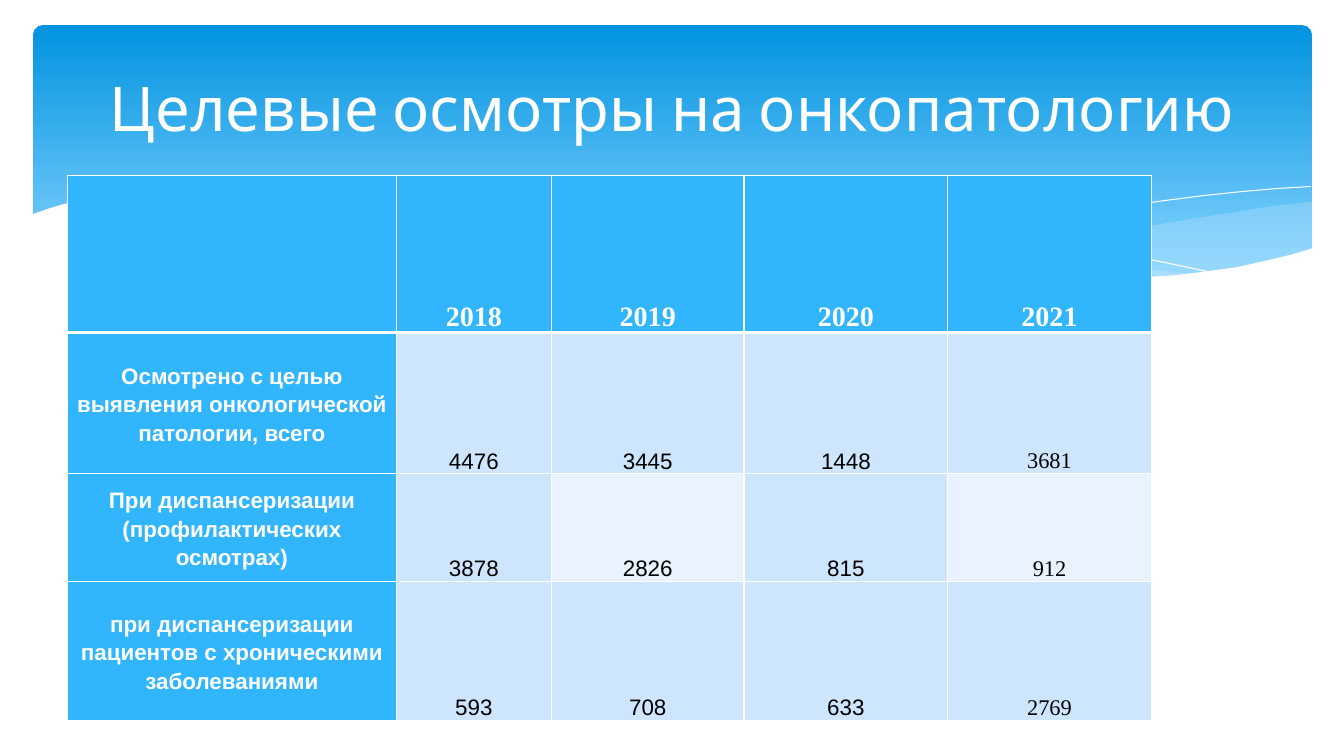
from lxml import etree
from pptx import Presentation
from pptx.dml.color import RGBColor
from pptx.enum import shapes, text
from pptx.oxml import ns
from pptx.util import Inches, Pt

TITLE = "Целевые осмотры на онкопатологию"
YEARS = ["", "2018", "2019", "2020", "2021"]
ROWS = [
    ["Осмотрено с целью выявления онкологической патологии, всего",
     "4476", "3445", "1448", "3681"],
    ["При диспансеризации (профилактических осмотрах)",
     "3878", "2826", "815", "912"],
    ["при диспансеризации пациентов с хроническими заболеваниями",
     "593", "708", "633", "2769"],
]
COLUMN_WIDTHS = [3.26, 1.54, 1.91, 2.02, 2.02]
ROW_HEIGHTS = [1.56, 1.4, 1.07, 1.38]
PALE_CELLS = {(2, 2), (2, 4)}
COLORS = {
    "sky_top": "0293E0", "sky_bottom": "83D3FE", "wave": "C6E7FC",
    "header": "31B6FD", "value": "CEE5FE", "pale": "E8F3FF",
    "white": "FFFFFF", "black": "000000",
}

RIGHT_WAVE = [
    (13.01, 2), (12.65, 2.04), (12.27, 2.1), (11.88, 2.16), (11.47, 2.23),
    (10.73, 2.37), (10.05, 2.48), (9.41, 2.57), (8.82, 2.65), (9.21, 2.69),
    (9.58, 2.72), (9.93, 2.75), (10.41, 2.77), (10.85, 2.78), (11.26, 2.77),
    (11.63, 2.74), (11.96, 2.7), (12.28, 2.65), (12.57, 2.59), (12.84, 2.52),
    (13.01, 2.47)]
MIDDLE_WAVE = [
    (11.9, 2.73), (11.54, 2.69), (10.76, 2.6), (9.89, 2.47), (8.91, 2.31),
    (8.39, 2.22), (7.78, 2.11), (7.21, 2.03), (6.69, 1.96), (6.19, 1.91),
    (5.6, 1.87), (5.06, 1.85), (4.59, 1.86), (4.18, 1.88), (3.82, 1.91),
    (4.31, 1.96), (4.83, 2.03), (5.39, 2.11), (5.99, 2.22), (7.06, 2.4),
    (8.02, 2.55), (8.87, 2.66), (9.63, 2.74), (10.3, 2.77), (10.9, 2.78),
    (11.43, 2.77)]
FALLING_LINE = [
    (4.12, 1.95), (4.38, 1.92), (4.84, 1.89), (5.35, 1.87), (6, 1.88),
    (6.8, 1.92), (7.42, 1.97), (8.11, 2.04), (8.86, 2.13), (9.7, 2.26),
    (10.6, 2.41), (11.58, 2.61), (12.1, 2.72)]
RISING_LINE = [
    (8.18, 2.57), (8.7, 2.46), (9.27, 2.35), (9.97, 2.23), (10.75, 2.1),
    (11.55, 1.99), (11.94, 1.94), (12.32, 1.9), (12.67, 1.87), (13, 1.85)]
WHITE_WAVE = [
    (13.03, 2.46), (12.79, 2.53), (12.54, 2.59), (12.27, 2.65), (11.98, 2.69),
    (11.67, 2.73), (11.34, 2.75), (10.97, 2.77), (10.58, 2.76), (10.15, 2.75),
    (9.69, 2.72), (9.18, 2.68), (8.63, 2.62), (8.04, 2.54), (7.4, 2.45),
    (6.71, 2.33), (5.96, 2.2), (5.21, 2.07), (4.53, 1.97), (3.9, 1.9),
    (3.33, 1.86), (2.82, 1.84), (2.35, 1.84), (1.94, 1.85), (1.58, 1.87),
    (1.27, 1.91), (1.01, 1.95), (0.79, 1.99), (0.61, 2.03), (0.48, 2.07),
    (0.31, 2.13), (0.31, 3.29), (13.03, 3.29)]
# points, fill colour, opacity in percent
WAVES = [
    (RIGHT_WAVE, "wave", 29), (MIDDLE_WAVE, "wave", 40),
    (FALLING_LINE, None, 100), (RISING_LINE, None, 100),
    (WHITE_WAVE, "white", 100),
]


def color(name):
    return RGBColor.from_string(COLORS[name])


def add_sky(page):
    sky = page.shapes.add_shape(
        shapes.MSO_SHAPE.ROUNDED_RECTANGLE,
        Inches(0.33), Inches(0.25), Inches(12.68), Inches(2.7))
    sky.adjustments[0] = 0.034
    sky.shadow.inherit = False
    sky.line.fill.background()
    sky.fill.gradient()
    sky.fill.gradient_angle = 270
    stops = [("sky_top", 0), ("sky_bottom", 0.9)]
    for stop, (name, position) in zip(sky.fill.gradient_stops, stops):
        stop.color.rgb = color(name)
        stop.position = position


def add_wave(page, points, fill_name, opacity):
    """Draw a filled wave, or a white hairline when there is no fill."""
    corners = [(Inches(x), Inches(y)) for x, y in points]
    builder = page.shapes.build_freeform(*corners[0])
    builder.add_line_segments(corners[1:], close=fill_name is not None)
    wave = builder.convert_to_shape()
    wave.shadow.inherit = False
    if fill_name is None:
        wave.fill.background()
        wave.line.color.rgb = color("white")
        wave.line.width = Pt(0)
        return
    wave.line.fill.background()
    wave.fill.solid()
    wave.fill.fore_color.rgb = color(fill_name)
    if opacity < 100:
        rgb = wave.fill._xPr.find(".//" + ns.qn("a:srgbClr"))
        etree.SubElement(rgb, ns.qn("a:alpha"), val=str(opacity * 1000))


def set_borders(cell, widths):
    properties = cell._tc.get_or_add_tcPr()
    for side, width in widths.items():
        line = etree.SubElement(properties, ns.qn("a:ln" + side), w=str(Pt(width)))
        fill = etree.SubElement(line, ns.qn("a:solidFill"))
        etree.SubElement(fill, ns.qn("a:srgbClr"), val=COLORS["white"])


def format_cell(cell, row, column):
    is_label = row == 0 or column == 0
    set_borders(cell, {"L": 1, "R": 1, "T": 3 if row == 1 else 1,
                       "B": 3 if row == 0 else 1})
    cell.fill.solid()
    cell.fill.fore_color.rgb = color(
        "header" if is_label else "pale" if (row, column) in PALE_CELLS else "value")
    cell.margin_left = cell.margin_right = Inches(0.07)
    cell.margin_top = cell.margin_bottom = 0
    anchors = text.MSO_ANCHOR
    cell.vertical_anchor = anchors.MIDDLE if column == 0 else anchors.BOTTOM
    para = cell.text_frame.paragraphs[0]
    para.alignment = text.PP_ALIGN.CENTER
    para.line_spacing = 1.15
    for span in para.runs:
        span.font.name = "Times New Roman" if row == 0 or column == 4 else "Arial"
        span.font.size = Pt(20 if row == 0 else 16)
        span.font.bold = is_label
        span.font.color.rgb = color("white" if is_label else "black")


def add_exam_table(page):
    content = [YEARS] + ROWS
    table = page.shapes.add_table(
        len(content), len(YEARS), Inches(0.67), Inches(1.74),
        Inches(sum(COLUMN_WIDTHS)), Inches(sum(ROW_HEIGHTS))).table
    for column, width in zip(table.columns, COLUMN_WIDTHS):
        column.width = Inches(width)
    for row, height in zip(table.rows, ROW_HEIGHTS):
        row.height = Inches(height)
    for row, values in enumerate(content):
        for column, value in enumerate(values):
            cell = table.cell(row, column)
            cell.text_frame.text = value
            format_cell(cell, row, column)


def place_title(page):
    title = page.shapes.title
    title.left, title.top = Inches(0.67), Inches(0.37)
    title.width, title.height = Inches(12), Inches(1.37)
    frame = title.text_frame
    frame.text = TITLE
    frame.word_wrap = True
    frame.vertical_anchor = text.MSO_ANCHOR.MIDDLE
    para = frame.paragraphs[0]
    para.alignment = text.PP_ALIGN.CENTER
    font = para.runs[0].font
    font.name, font.size = "Cabin", Pt(44)
    font.color.rgb = color("white")
    page.shapes._spTree.append(title._element)  # bring in front of the sky


def main():
    deck = Presentation()
    deck.slide_width, deck.slide_height = Inches(13.33), Inches(7.5)
    page = deck.slides.add_slide(deck.slide_layouts[5])
    add_sky(page)
    for points, fill_name, opacity in WAVES:
        add_wave(page, points, fill_name, opacity)
    add_exam_table(page)
    place_title(page)
    deck.save("out.pptx")


if __name__ == "__main__":
    main()
